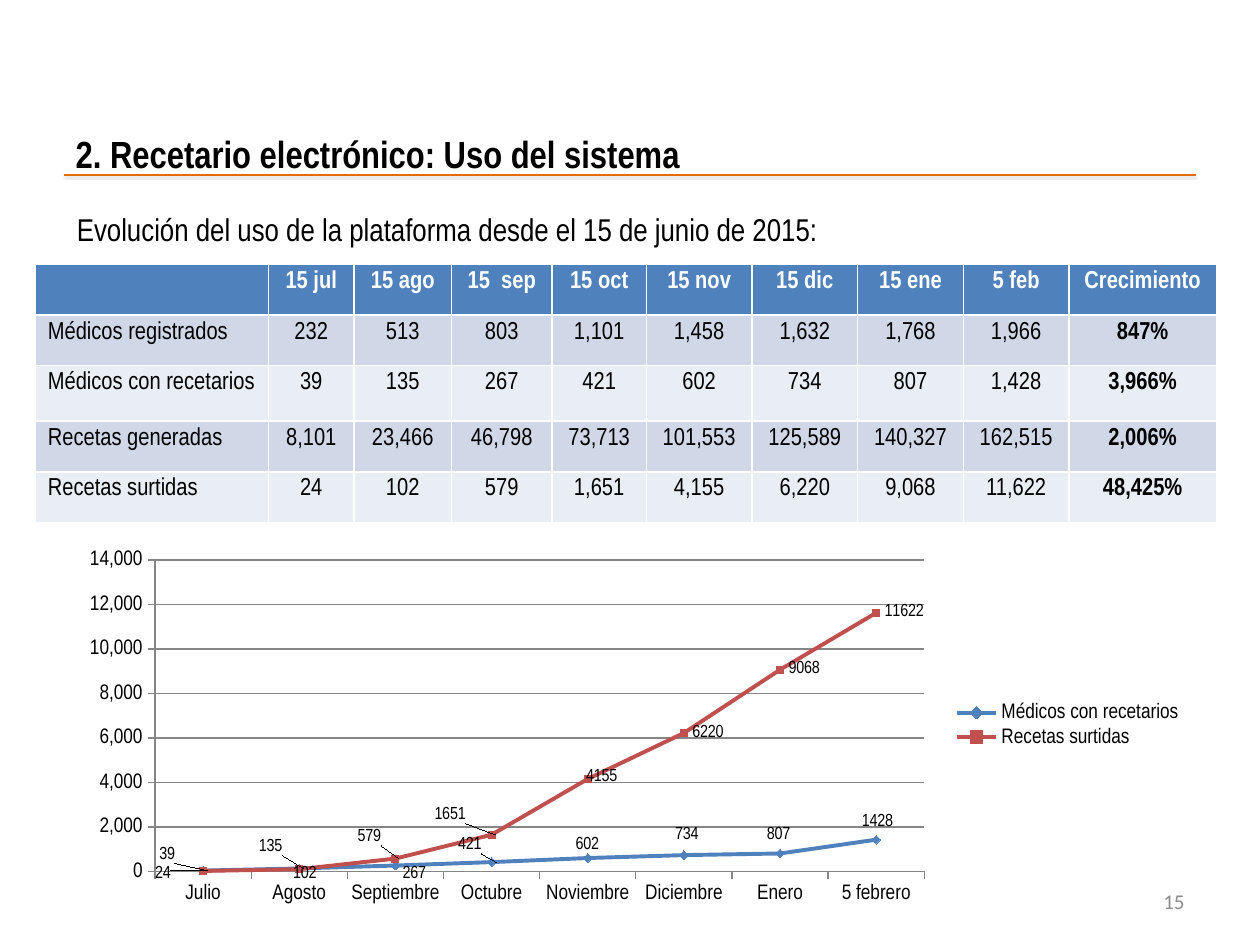
from dataclasses import dataclass

from lxml.etree import SubElement
from pptx import Presentation
from pptx.chart.data import CategoryChartData
from pptx.dml.color import RGBColor
from pptx.enum.chart import (XL_CHART_TYPE, XL_LABEL_POSITION, XL_LEGEND_POSITION,
                             XL_MARKER_STYLE, XL_TICK_MARK)
from pptx.enum.shapes import MSO_CONNECTOR
from pptx.enum.text import MSO_ANCHOR, PP_ALIGN
from pptx.oxml import parse_xml
from pptx.oxml.ns import nsdecls, qn
from pptx.util import Cm, Pt


@dataclass(frozen=True)
class Theme:
    font: str = "Arial Narrow"
    number_font: str = "Calibri"
    black: RGBColor = RGBColor(0, 0, 0)
    white: RGBColor = RGBColor(255, 255, 255)
    grey: RGBColor = RGBColor(0x8C, 0x8C, 0x8C)
    grid: RGBColor = RGBColor(0x86, 0x86, 0x86)
    orange: RGBColor = RGBColor(0xE4, 0x6C, 0x0A)
    blue: RGBColor = RGBColor(0x4F, 0x81, 0xBD)
    red: RGBColor = RGBColor(0xC0, 0x50, 0x4D)
    dark_band: RGBColor = RGBColor(0xD0, 0xD8, 0xE8)
    light_band: RGBColor = RGBColor(0xE9, 0xED, 0xF4)
    title_size: Pt = Pt(21.6)
    lead_size: Pt = Pt(18)
    table_size: Pt = Pt(14)
    small_size: Pt = Pt(12)
    label_size: Pt = Pt(10)


theme = Theme()


def write(frame, text, size, color=theme.black, bold=False, align=PP_ALIGN.LEFT,
          font=theme.font):
    paragraph = frame.paragraphs[0]
    paragraph.alignment = align
    run = paragraph.add_run()
    run.text = text
    run.font.name = font
    run.font.size = size
    run.font.bold = bold
    run.font.color.rgb = color


def set_layout(parent, position, **parts):
    """Put a manual chart layout in parent at the given child position."""
    for old in parent.findall(qn("c:layout")):
        parent.remove(old)
    layout = parse_xml(f"<c:layout {nsdecls('c')}><c:manualLayout/></c:layout>")
    for tag, value in parts.items():
        SubElement(layout[0], qn(f"c:{tag}")).set("val", str(value))
    parent.insert(position, layout)


prs = Presentation()
prs.slide_width, prs.slide_height = Cm(25.4), Cm(19.05)
slide = prs.slides.add_slide(prs.slide_layouts[5])

# Heading
title = slide.shapes.title
title.left, title.top, title.width, title.height = Cm(1.27), Cm(2.51), Cm(22.86), Cm(1.17)
title.text_frame.vertical_anchor = MSO_ANCHOR.MIDDLE
write(title.text_frame, "2. Recetario electrónico: Uso del sistema", theme.title_size, bold=True)

rule = slide.shapes.add_connector(MSO_CONNECTOR.STRAIGHT, Cm(1.3), Cm(3.53), Cm(24.1), Cm(3.53))
rule.line.color.rgb = theme.orange
rule.line.width = Pt(0.75)
rule.element.spPr.append(parse_xml(
    f'<a:effectLst {nsdecls("a")}><a:outerShdw blurRad="12700" dist="12700" dir="5400000">'
    '<a:srgbClr val="BFBFBF"/></a:outerShdw></a:effectLst>'))

lead = slide.shapes.add_textbox(Cm(1.3), Cm(4.11), Cm(18.01), Cm(1.02)).text_frame
lead.word_wrap = True
write(lead, "Evolución del uso de la plataforma desde el 15 de junio de 2015:", theme.lead_size)

page_number = slide.shapes.add_textbox(Cm(18.21), Cm(17.65), Cm(5.92), Cm(1.02)).text_frame
page_number.word_wrap = True
page_number.vertical_anchor = MSO_ANCHOR.MIDDLE
write(page_number, "15", theme.small_size, theme.grey, align=PP_ALIGN.RIGHT,
      font=theme.number_font)

# Usage table
usage = [
    ["", "15 jul", "15 ago", "15  sep", "15 oct", "15 nov", "15 dic", "15 ene", "5 feb",
     "Crecimiento"],
    ["Médicos registrados", "232", "513", "803", "1,101", "1,458", "1,632", "1,768", "1,966",
     "847%"],
    ["Médicos con recetarios", "39", "135", "267", "421", "602", "734", "807", "1,428",
     "3,966%"],
    ["Recetas generadas", "8,101", "23,466", "46,798", "73,713", "101,553", "125,589",
     "140,327", "162,515", "2,006%"],
    ["Recetas surtidas", "24", "102", "579", "1,651", "4,155", "6,220", "9,068", "11,622",
     "48,425%"],
]
column_widths = [4.7, 1.73, 1.96, 2.03, 1.9, 2.13, 2.13, 2.13, 2.13, 2.97]
row_heights = [1.02, 1.02, 1.12, 1.02, 1.02]
table = slide.shapes.add_table(len(usage), len(column_widths), Cm(0.71), Cm(5.33),
                               Cm(sum(column_widths)), Cm(sum(row_heights))).table
for column, width in zip(table.columns, column_widths):
    column.width = Cm(width)
for r, (row, height) in enumerate(zip(usage, row_heights)):
    table.rows[r].height = Cm(height)
    is_header = r == 0
    band = theme.blue if is_header else theme.dark_band if r % 2 else theme.light_band
    for c, text in enumerate(row):
        cell = table.cell(r, c)
        cell.fill.solid()
        cell.fill.fore_color.rgb = band
        if text:
            write(cell.text_frame, text, theme.table_size,
                  theme.white if is_header else theme.black,
                  bold=is_header or c == len(row) - 1,
                  align=PP_ALIGN.CENTER if c else PP_ALIGN.LEFT)

# Growth chart, drawn from two of the table rows
growth = CategoryChartData(number_format="General")
growth.categories = ["Julio", "Agosto", "Septiembre", "Octubre", "Noviembre", "Diciembre",
                     "Enero", "5 febrero"]
for name, *counts, _ in (usage[2], usage[4]):
    growth.add_series(name, [int(count.replace(",", "")) for count in counts])
chart = slide.shapes.add_chart(XL_CHART_TYPE.LINE_MARKERS, Cm(1.3), Cm(10.92), Cm(22.81),
                               Cm(7.39), growth).chart
chart.has_title = False
chart.font.name = theme.font
chart.font.size = theme.small_size
chart.font.color.rgb = theme.black
chart.has_legend = True
chart.legend.position = XL_LEGEND_POSITION.RIGHT
chart.legend.include_in_layout = False
set_layout(chart.element.find(f".//{qn('c:plotArea')}"), 0, layoutTarget="inner",
           xMode="edge", yMode="edge", x=0.08, y=0.05, w=0.68, h=0.85)

counts_axis = chart.value_axis
counts_axis.minimum_scale, counts_axis.maximum_scale, counts_axis.major_unit = 0, 14000, 2000
counts_axis.tick_labels.number_format = "#,##0"
counts_axis.tick_labels.number_format_is_linked = False
counts_axis.has_major_gridlines = True
for axis in (counts_axis, chart.category_axis):
    axis.major_tick_mark = XL_TICK_MARK.OUTSIDE
for part in (counts_axis, chart.category_axis, counts_axis.major_gridlines):
    part.format.line.color.rgb = theme.grid
    part.format.line.width = Pt(0.75)

# Label shifts from the right of each point, in percent of the chart size
line_styles = [
    (theme.blue, XL_MARKER_STYLE.DIAMOND, 5,
     [(-4.7, -4.1), (-4.4, -5.7), (-0.2, 2.5), (-3.8, -4.4), (-1.9, -3.5), (-1.6, -5.4),
      (-2, -4.9), (-2.1, -4.6)]),
    (theme.red, XL_MARKER_STYLE.SQUARE, 4,
     [(-5, 1.1), (-1.3, 1.4), (-4.1, -5.7), (-5.8, -5.2), (-0.9, -0.5)]),
]
for series, series_xml, (color, marker, marker_size, shifts) in zip(
        chart.plots[0].series, chart.element.iter(qn("c:ser")), line_styles):
    series.smooth = False
    series.format.line.color.rgb = color
    series.format.line.width = Pt(2.25)
    series.marker.style = marker
    series.marker.size = marker_size
    series.marker.format.fill.solid()
    series.marker.format.fill.fore_color.rgb = color
    series.marker.format.line.color.rgb = color
    series.data_labels.show_value = True
    series.data_labels.position = XL_LABEL_POSITION.RIGHT
    series.data_labels.font.size = theme.label_size
    for i in range(len(shifts)):
        point_label = series.points[i].data_label
        point_label.font.size = theme.label_size
        point_label.position = XL_LABEL_POSITION.RIGHT
    for label_xml, (dx, dy) in zip(series_xml.iter(qn("c:dLbl")), shifts):
        set_layout(label_xml, 1, x=dx / 100, y=dy / 100)

prs.save("out.pptx")
